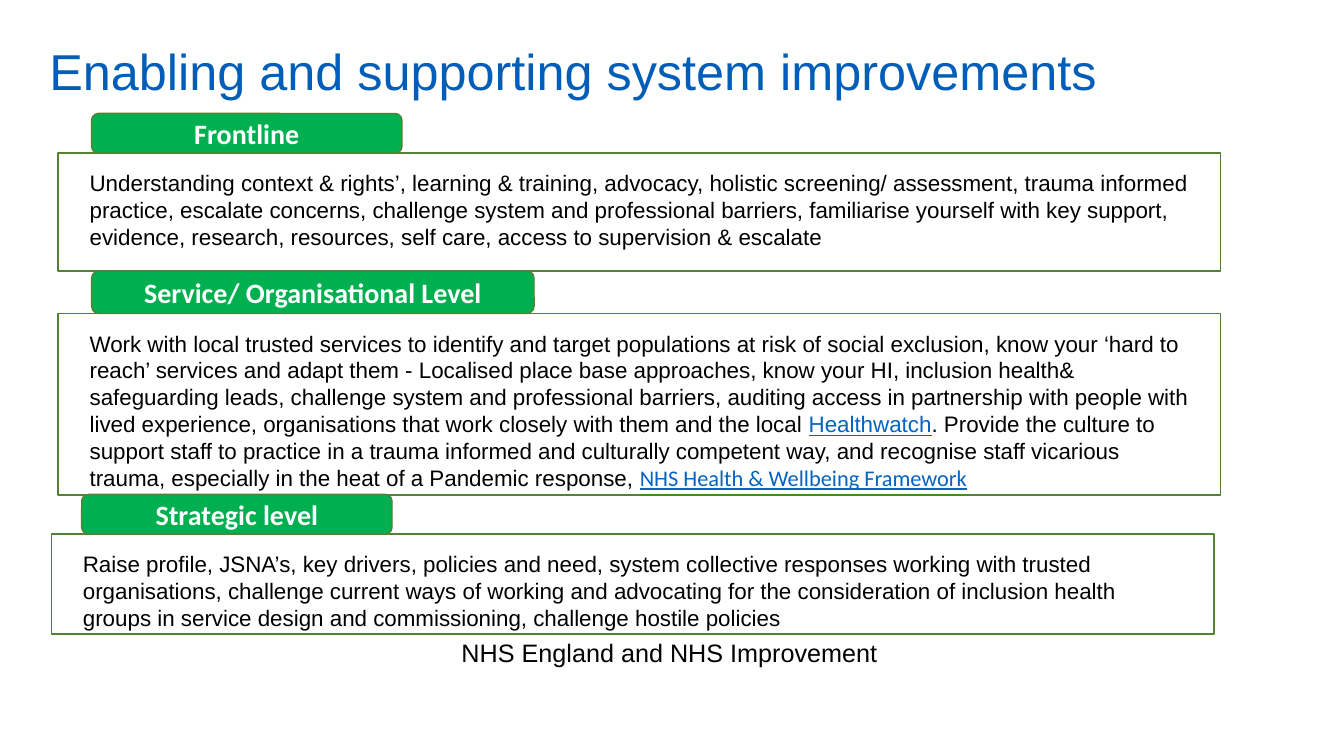
from dataclasses import dataclass

from pptx import Presentation
from pptx.dml.color import RGBColor
from pptx.enum.shapes import MSO_SHAPE as Shape
from pptx.enum.text import MSO_ANCHOR as Anchor, MSO_AUTO_SIZE as AutoSize, PP_ALIGN as Align
from pptx.util import Cm, Pt


@dataclass(frozen=True)
class Theme:
    title_blue: RGBColor = RGBColor(0x00, 0x5E, 0xB8)
    link_blue: RGBColor = RGBColor(0x05, 0x63, 0xC1)
    tab_green: RGBColor = RGBColor(0x00, 0xB0, 0x50)
    outline_green: RGBColor = RGBColor(0x54, 0x82, 0x35)
    black: RGBColor = RGBColor(0, 0, 0)
    white: RGBColor = RGBColor(255, 255, 255)
    title_size: Pt = Pt(36)
    tab_size: Pt = Pt(20)
    footer_size: Pt = Pt(18)
    body_size: Pt = Pt(16)
    body_font: str = "Arial"
    tab_font: str = "Calibri"


theme = Theme()


def set_font(font, name, size, color):
    font.name, font.size = name, size
    font.color.rgb = color


def add_outlined(shapes, kind, left, top, width, height, line_width):
    shape = shapes.add_shape(kind, Cm(left), Cm(top), Cm(width), Cm(height))
    shape.shadow.inherit = False
    shape.fill.background()
    shape.line.color.rgb = theme.outline_green
    shape.line.width = Pt(line_width)
    shape.text_frame.word_wrap = True
    return shape


presentation = Presentation()
presentation.slide_width, presentation.slide_height = Cm(33.87), Cm(19.05)
slide = presentation.slides.add_slide(presentation.slide_layouts[5])

title = slide.shapes.title
title.left, title.top, title.width, title.height = Cm(0.99), Cm(0.89), Cm(27.84), Cm(1.8)
title.text_frame.text = "Enabling and supporting system improvements"
title.text_frame.auto_size = AutoSize.NONE
title.text_frame.vertical_anchor = Anchor.TOP
paragraph = title.text_frame.paragraphs[0]
paragraph.alignment = Align.LEFT
set_font(paragraph.font, theme.body_font, theme.title_size, theme.title_blue)

footer = slide.shapes.add_textbox(Cm(11.38), Cm(15.88), Cm(11.1), Cm(1.12))
footer.fill.solid()
footer.fill.fore_color.rgb = theme.white
footer.text_frame.word_wrap = True
footer.text_frame.vertical_anchor = Anchor.MIDDLE
paragraph = footer.text_frame.paragraphs[0]
paragraph.text = "NHS England and NHS Improvement"
set_font(paragraph.font, theme.body_font, theme.footer_size, theme.black)

# Heading, tab (left, width, height), panel (left, top, height), text pieces;
# a piece is (text, font of a link or None for plain text)
levels = [
    ("Frontline", (2.31, 7.82, 1.0), (1.47, 3.86, 2.97), [
        ("Understanding context & rights’, learning & training, advocacy, holistic screening/ "
         "assessment, trauma informed practice, escalate concerns, challenge system and "
         "professional barriers, familiarise yourself with key support, evidence, research, "
         "resources, self care, access to supervision & escalate", None),
    ]),
    ("Service/ Organisational Level", (2.31, 11.15, 1.07), (1.47, 7.9, 4.57), [
        ("Work with local trusted services to identify and target populations at risk of social "
         "exclusion, know your ‘hard to reach’ services and adapt them - Localised place base "
         "approaches, know your HI, inclusion health& safeguarding leads, challenge system and "
         "professional barriers, auditing access in partnership with people with lived "
         "experience, organisations that work closely with them and the local ", None),
        ("Healthwatch", theme.body_font),
        (". Provide the culture to support staff to practice in a trauma informed and culturally "
         "competent way, and recognise staff vicarious trauma, especially in the heat of a "
         "Pandemic response, ", None),
        ("NHS Health & Wellbeing Framework", theme.tab_font),
    ]),
    ("Strategic level", (2.06, 7.82, 1.0), (1.3, 13.46, 2.51), [
        ("Raise profile, JSNA’s, key drivers, policies and need, system collective responses "
         "working with trusted organisations, challenge current ways of working and advocating "
         "for the consideration of inclusion health groups in service design and commissioning, "
         "challenge hostile policies", None),
    ]),
]
PANEL_WIDTH = 29.29

for heading, (tab_left, tab_width, tab_height), (left, top, height), pieces in levels:
    group = slide.shapes.add_group_shape()

    panel = add_outlined(group.shapes, Shape.RECTANGLE, left, top, PANEL_WIDTH, height, 1.25)
    frame = panel.text_frame
    frame.vertical_anchor = Anchor.TOP
    frame.margin_left = frame.margin_right = Cm(0.79)
    frame.margin_top, frame.margin_bottom = Cm(0.41), Cm(0.2)
    paragraph = frame.paragraphs[0]
    paragraph.alignment = Align.LEFT
    set_font(paragraph.font, theme.body_font, theme.body_size, theme.black)
    for text, link_font in pieces:
        run = paragraph.add_run()
        run.text = text
        color = theme.link_blue if link_font else theme.black
        set_font(run.font, link_font or theme.body_font, theme.body_size, color)
        if link_font:
            run.font.underline = True

    tab = add_outlined(group.shapes, Shape.ROUNDED_RECTANGLE,
                       tab_left, top - tab_height, tab_width, tab_height, 1)
    tab.fill.solid()
    tab.fill.fore_color.rgb = theme.tab_green
    frame = tab.text_frame
    frame.vertical_anchor = Anchor.MIDDLE
    frame.margin_top = frame.margin_bottom = Cm(0)
    paragraph = frame.paragraphs[0]
    paragraph.text = heading
    paragraph.alignment = Align.CENTER
    set_font(paragraph.font, theme.tab_font, theme.tab_size, theme.white)
    paragraph.font.bold = True

presentation.save("out.pptx")
